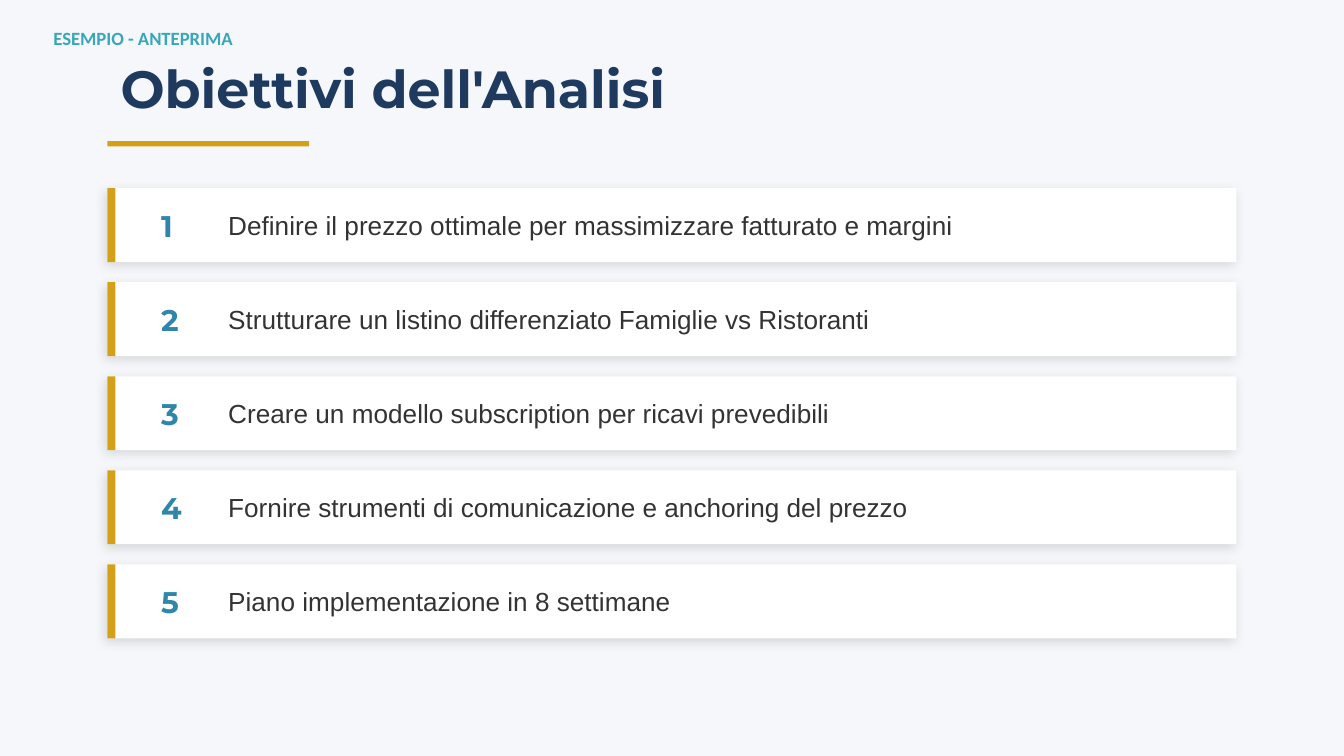
from lxml import etree
from pptx import Presentation
from pptx.dml.color import RGBColor
from pptx.enum import shapes, text
from pptx.oxml import ns
from pptx.util import Inches, Pt

NAVY, GOLD, BLUE, TEAL = "1E3A5F", "D4A017", "2E86AB", "3AA6B9"
WHITE, GREY, PALE = "FFFFFF", "333333", "F5F7FA"

HEAD = {"name": "Montserrat", "size": Pt(28), "bold": True}
NUMBER = {"name": "Montserrat", "size": Pt(16), "bold": True}
BODY = {"name": "Arial", "size": Pt(14), "bold": False}
TAG = {"name": "Calibri", "size": Pt(10), "bold": True}

GOALS = [
    "Definire il prezzo ottimale per massimizzare fatturato e margini",
    "Strutturare un listino differenziato Famiglie vs Ristoranti",
    "Creare un modello subscription per ricavi prevedibili",
    "Fornire strumenti di comunicazione e anchoring del prezzo",
    "Piano implementazione in 8 settimane",
]


def paint(color, tone):
    color.rgb = RGBColor.from_string(tone)


def add_rect(slide, box, tone):
    rect = slide.shapes.add_shape(
        shapes.MSO_SHAPE.RECTANGLE, *map(Inches, box))
    rect.shadow.inherit = False
    rect.fill.solid()
    paint(rect.fill.fore_color, tone)
    rect.line.fill.background()
    return rect


def add_text(slide, box, words, style, tone):
    label = slide.shapes.add_textbox(*map(Inches, box))
    frame = label.text_frame
    frame.word_wrap = True
    frame.vertical_anchor = text.MSO_ANCHOR.MIDDLE
    para = frame.paragraphs[0]
    para.text = words
    for key, value in style.items():
        setattr(para.font, key, value)
    paint(para.font.color, tone)
    return frame


def add_shadow(shape):
    """Soft black shadow at 12% opacity."""
    effects = shape._element.spPr.find(ns.qn("a:effectLst"))
    outer = etree.SubElement(
        effects, ns.qn("a:outerShdw"), blurRad=str(Pt(6)), dist=str(Pt(2)),
        dir=str(135 * 60000), algn="bl", rotWithShape="0")
    color = etree.SubElement(outer, ns.qn("a:srgbClr"), val="000000")
    etree.SubElement(color, ns.qn("a:alpha"), val="12000")


def add_header(slide, left, top, width):
    add_text(slide, (left, top, width, 0.7),
             "Obiettivi dell'Analisi", HEAD, NAVY)
    add_rect(slide, (left, top + 0.75, 1.5, 0.04), GOLD)


def add_card(slide, left, top, width, height, number, goal):
    add_shadow(add_rect(slide, (left, top, width, height), WHITE))
    add_rect(slide, (left, top, 0.06, height), GOLD)
    add_text(slide, (left + 0.3, top, 0.4, height), str(number), NUMBER, BLUE)
    add_text(slide, (left + 0.8, top, width - 1, height), goal, BODY, GREY)


def add_goals(slide, left, top, width, height=0.55, gap=0.15):
    for row, goal in enumerate(GOALS):
        add_card(slide, left, top + row * (height + gap), width, height,
                 row + 1, goal)


def add_tag(slide, box):
    frame = add_text(slide, box, "ESEMPIO - ANTEPRIMA", TAG, TEAL)
    frame.word_wrap = False
    frame.auto_size = text.MSO_AUTO_SIZE.SHAPE_TO_FIT_TEXT
    frame.vertical_anchor = text.MSO_ANCHOR.TOP


def main():
    deck = Presentation()
    deck.slide_width, deck.slide_height = Inches(10), Inches(5.625)
    slide = deck.slides.add_slide(deck.slide_layouts[6])
    slide.background.fill.solid()
    paint(slide.background.fill.fore_color, PALE)

    # Title, list of goals, preview tag
    add_header(slide, 0.8, 0.3, 8.4)
    add_goals(slide, 0.8, 1.4, 8.4)
    add_tag(slide, (0.3, 0.15, 3, 0.35))
    deck.save("out.pptx")


if __name__ == "__main__":
    main()
